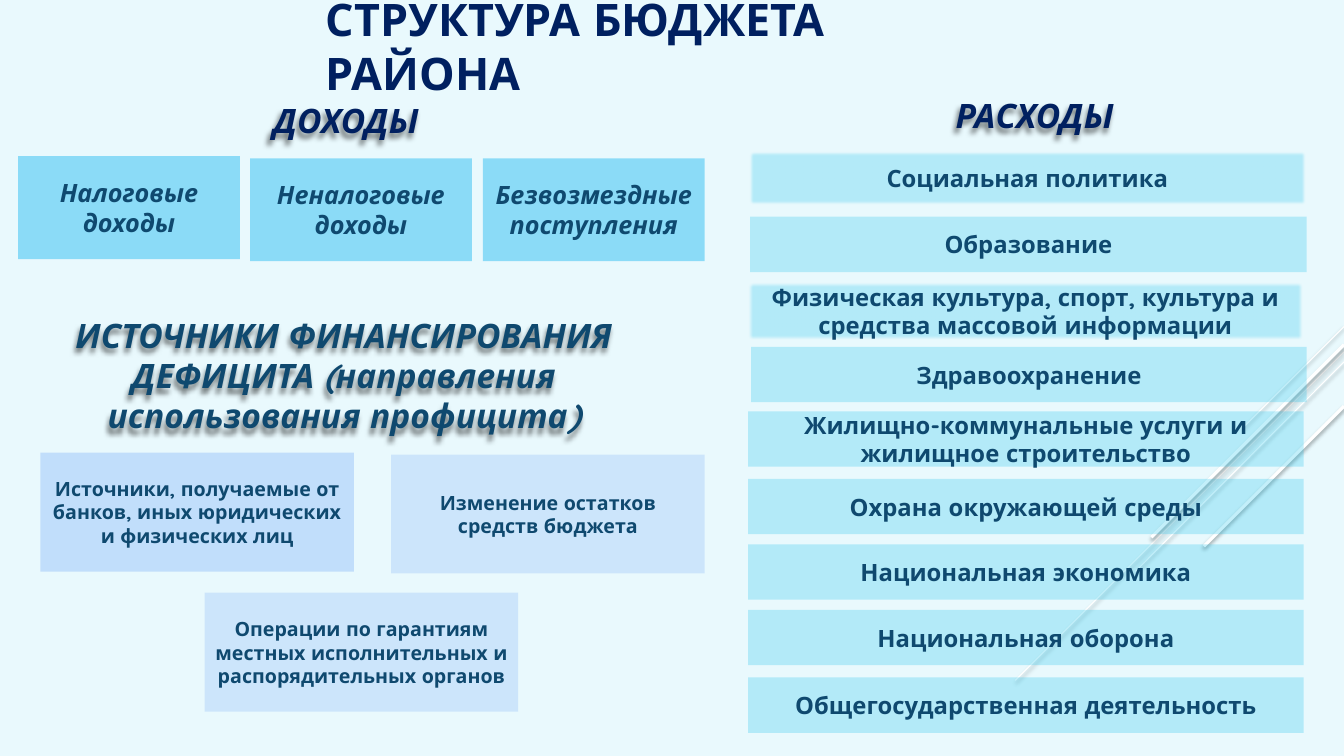
from dataclasses import dataclass

from lxml.etree import SubElement
from pptx import Presentation
from pptx.dml.color import RGBColor as RGB
from pptx.enum.shapes import MSO_CONNECTOR as CONN, MSO_SHAPE as SHAPE
from pptx.enum.text import MSO_ANCHOR as ANCHOR, MSO_AUTO_SIZE as FIT, PP_ALIGN as ALIGN
from pptx.oxml.ns import qn
from pptx.util import Inches, Pt


@dataclass(frozen=True)
class Theme:
    font: str = "Quicksand"
    background: str = "E9F9FD"
    navy: str = "002060"
    ink: str = "0F496F"
    streak: str = "FFFFFF"
    shadow: str = "000000"
    income: str = "00B0F0"
    expense: str = "22C5ED"
    source: str = "B1D3FB"
    title_size: int = 32
    heading_size: int = 24
    income_size: int = 18
    expense_size: int = 17
    source_size: int = 14


class BudgetSlide:
    def __init__(self, prs, theme):
        self.theme = theme
        self.slide = prs.slides.add_slide(prs.slide_layouts[5])
        fill = self.slide.background.fill
        fill.solid()
        fill.fore_color.rgb = RGB.from_string(theme.background)

    def set_text(self, sp, text, size, color, align, italic=False, wrap=True, anchor=ANCHOR.MIDDLE):
        tf = sp.text_frame
        tf.text = text
        tf.word_wrap = wrap
        tf.auto_size = FIT.NONE
        tf.vertical_anchor = anchor
        p = tf.paragraphs[0]
        p.alignment = align
        for r in p.runs:
            r.font.name = self.theme.font
            r.font.size = Pt(size)
            r.font.bold = True
            r.font.italic = italic
            r.font.color.rgb = RGB.from_string(color)

    def cast_shadow(self, effects, blur, dist, angle, alpha):
        shadow = SubElement(effects, qn("a:outerShdw"), blurRad=str(Pt(blur)), dist=str(Pt(dist)),
                            dir=str(angle * 60000), algn="ctr", rotWithShape="0")
        color = SubElement(shadow, qn("a:srgbClr"), val=self.theme.shadow)
        SubElement(color, qn("a:alpha"), val=str(alpha * 1000))

    def title(self, text, box):
        sp = self.slide.shapes.title
        sp.left, sp.top, sp.width, sp.height = map(Inches, box)
        self.set_text(sp, text, self.theme.title_size, self.theme.navy, ALIGN.LEFT)

    def heading(self, text, box, color, align=ALIGN.LEFT, wrap=False, anchor=ANCHOR.TOP):
        sp = self.slide.shapes.add_textbox(*map(Inches, box))
        self.set_text(sp, text, self.theme.heading_size, color, align, True, wrap, anchor)
        sp.shadow.inherit = False
        self.cast_shadow(sp.element.spPr.find(qn("a:effectLst")), 4, 4, 120, 50)

    def block(self, text, box, color, alpha, size, italic=False, soft=False):
        sp = self.slide.shapes.add_shape(SHAPE.RECTANGLE, *map(Inches, box))
        sp.fill.solid()
        sp.fill.fore_color.rgb = RGB.from_string(color)
        sp.line.fill.background()
        sp.shadow.inherit = False
        spPr = sp.element.spPr
        tint = spPr.find(qn("a:solidFill")).find(qn("a:srgbClr"))
        SubElement(tint, qn("a:alpha"), val=str(alpha * 1000))
        if soft:
            SubElement(spPr.find(qn("a:effectLst")), qn("a:softEdge"), rad=str(Pt(2.5)))
        self.set_text(sp, text, size, self.theme.ink, ALIGN.CENTER, italic)

    def streak(self, x1, y1, x2, y2, width):
        line = self.slide.shapes.add_connector(CONN.STRAIGHT, *map(Inches, (x1, y1, x2, y2)))
        line.line.color.rgb = RGB.from_string(self.theme.streak)
        line.line.width = Pt(width)
        effects = SubElement(line.element.spPr, qn("a:effectLst"))
        self.cast_shadow(effects, 3.1, 1.6, 90, 38)


STREAKS = [
    (3.24, 12.33, 4.24, 0.75),
    (3.49, 10.07, 6.75, 0.75),
    (3.59, 11.26, 5.67, 0.75),
    (3.42, 11.42, 5.33, 2.25),
    (4.03, 11.94, 5.42, 2.25),
]
INCOMES = [
    ("Налоговые доходы", 0.18, 1.55),
    ("Неналоговые доходы", 2.48, 1.57),
    ("Безвозмездные поступления", 4.79, 1.57),
]
EXPENSES = [
    ("Социальная политика", 7.42, 1.49, 5.54, 0.55, True),
    ("Образование", 7.44, 2.15, 5.52, 0.55, False),
    ("Физическая культура, спорт, культура и средства массовой информации",
     7.41, 2.79, 5.52, 0.59, True),
    ("Здравоохранение", 7.45, 3.44, 5.51, 0.55, False),
    ("Жилищно-коммунальные услуги и жилищное строительство", 7.42, 4.08, 5.51, 0.55, False),
    ("Охрана окружающей среды", 7.42, 4.75, 5.51, 0.55, False),
    ("Национальная экономика", 7.42, 5.4, 5.51, 0.55, False),
    ("Национальная оборона", 7.42, 6.05, 5.51, 0.55, False),
    ("Общегосударственная деятельность", 7.42, 6.72, 5.51, 0.55, False),
]
SOURCES = [
    ("Источники, получаемые от банков, иных юридических и физических лиц", 0.4, 4.49, 70),
    ("Изменение остатков средств бюджета", 3.88, 4.51, 50),
    ("Операции по гарантиям местных исполнительных и распорядительных органов", 2.03, 5.88, 50),
]


def main():
    prs = Presentation()
    prs.slide_width, prs.slide_height = Inches(13.33), Inches(7.5)
    theme = Theme()
    s = BudgetSlide(prs, theme)

    for top, x, y, width in STREAKS:
        s.streak(13.33, top, x, y, width)

    s.title("СТРУКТУРА БЮДЖЕТА РАЙОНА", (3.13, 0.03, 7.04, 0.85))
    s.heading("ДОХОДЫ", (2.61, 0.94, 1.81, 0.5), theme.navy)
    s.heading("РАСХОДЫ", (9.38, 0.89, 1.96, 0.5), theme.navy)
    s.heading("ИСТОЧНИКИ ФИНАНСИРОВАНИЯ ДЕФИЦИТА (направления использования профицита)",
              (0.56, 3.11, 5.7, 1.22), theme.ink, ALIGN.CENTER, True, ANCHOR.MIDDLE)

    for text, left, top in INCOMES:
        s.block(text, (left, top, 2.2, 1.02), theme.income, 40, theme.income_size, italic=True)
    for text, left, top, width, height, soft in EXPENSES:
        s.block(text, (left, top, width, height), theme.expense, 27, theme.expense_size, soft=soft)
    for text, left, top, alpha in SOURCES:
        s.block(text, (left, top, 3.11, 1.18), theme.source, alpha, theme.source_size)

    prs.save("out.pptx")


if __name__ == "__main__":
    main()
